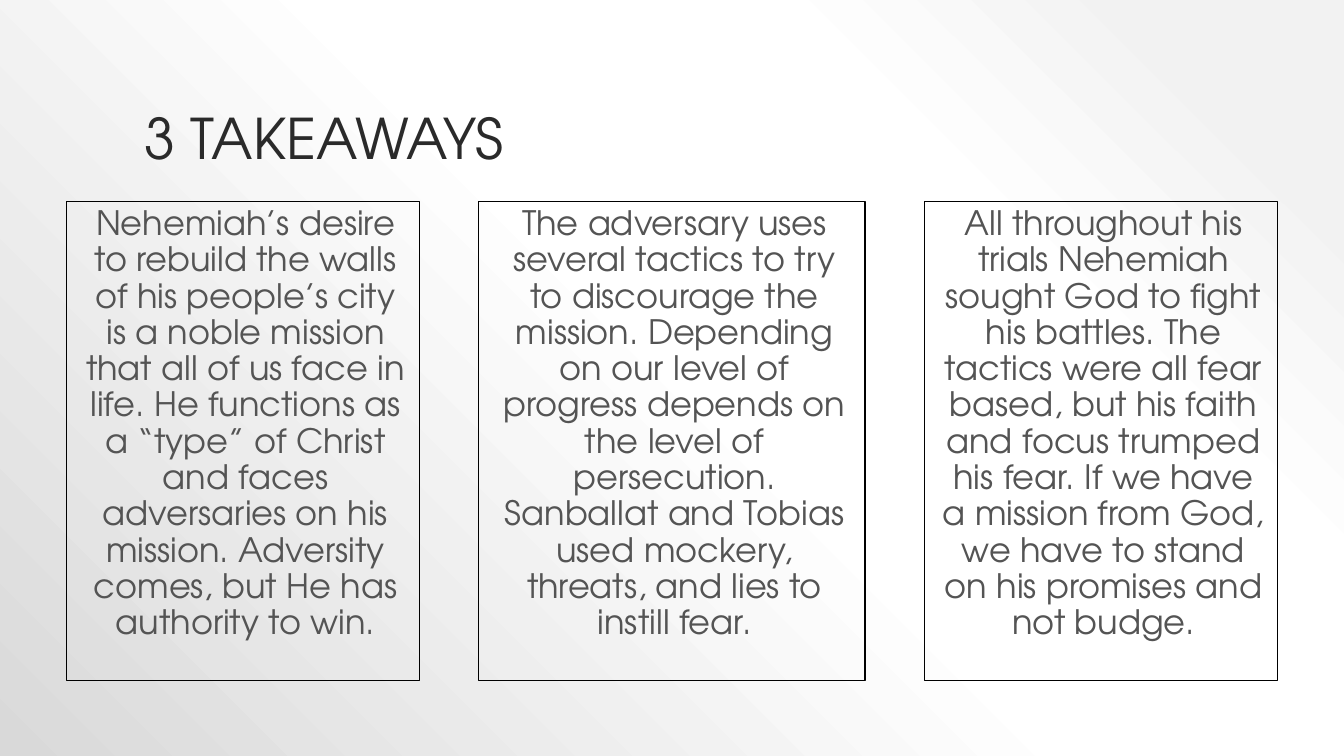
from lxml import etree
from pptx import Presentation
from pptx import util as u
from pptx.dml.color import RGBColor
from pptx.enum import shapes, text
from pptx.oxml import ns

WIDTH, HEIGHT = 13.33, 7.5
FONT = "TeX Gyre Adventor"
TITLE_COLOR = RGBColor(0x2A, 0x2A, 0x2A)
BODY_COLOR = RGBColor(0x54, 0x54, 0x54)
BORDER_COLOR = RGBColor(0x00, 0x00, 0x00)
BACKGROUND_STOPS = [
    (10, RGBColor(0xF2, 0xF2, 0xF2)),
    (28, RGBColor(0xFF, 0xFF, 0xFF)),
    (48, RGBColor(0xFF, 0xFF, 0xFF)),
    (100, RGBColor(0xD9, 0xD9, 0xD9)),
]

# Row of takeaways: outer margin, top and height; the gaps share what is left
MARGIN, ROW_TOP, ROW_HEIGHT = 0.66, 2, 4.75
TAKEAWAYS = [
    (3.5, "Nehemiah’s desire to rebuild the walls of his people’s city is a "
          "noble mission that all of us face in life. He functions as a “type” "
          "of Christ and faces adversaries on his mission. Adversity comes, "
          "but He has authority to win."),
    (3.83, "The adversary uses several tactics to try to discourage the "
           "mission. Depending on our level of progress depends on the level "
           "of persecution. Sanballat and Tobias used mockery, threats, and "
           "lies to instill fear."),
    (3.5, "All throughout his trials Nehemiah sought God to fight his battles. "
          "The tactics were all fear based, but his faith and focus trumped "
          "his fear. If we have a mission from God, we have to stand on his "
          "promises and not budge."),
]


def set_background(slide):
    """Radial gradient centred on the top right corner."""
    fill = slide.background.fill
    fill.gradient()
    gradient = slide.background._cSld.find(".//" + ns.qn("a:gradFill"))
    for child in list(gradient):
        gradient.remove(child)
    stops = etree.SubElement(gradient, ns.qn("a:gsLst"))
    for percent, color in BACKGROUND_STOPS:
        stop = etree.SubElement(stops, ns.qn("a:gs"), pos=str(percent * 1000))
        etree.SubElement(stop, ns.qn("a:srgbClr"), val=str(color))
    circle = etree.SubElement(gradient, ns.qn("a:path"), path="circle")
    etree.SubElement(circle, ns.qn("a:fillToRect"), l="100000", b="100000")


def write(shape, words, size, color, anchor, alignment):
    frame = shape.text_frame
    frame.text = words
    frame.word_wrap = True
    frame.vertical_anchor = anchor
    paragraph = frame.paragraphs[0]
    paragraph.alignment = alignment
    paragraph.line_spacing = 0.9
    font = paragraph.runs[0].font
    font.name, font.size, font.color.rgb = FONT, u.Pt(size), color
    return paragraph


def add_title(slide, words):
    box = slide.shapes.add_textbox(
        u.Inches(WIDTH * 0.1), u.Inches(HEIGHT * 0.04),
        u.Inches(WIDTH * 0.8), u.Inches(1.45))
    write(box, words, 40, TITLE_COLOR,
          text.MSO_ANCHOR.BOTTOM, text.PP_ALIGN.LEFT)


def add_takeaway(slide, left, width, words):
    shape = slide.shapes.add_shape(
        shapes.MSO_SHAPE.RECTANGLE, u.Inches(left), u.Inches(ROW_TOP),
        u.Inches(width), u.Inches(ROW_HEIGHT))
    shape.shadow.inherit = False
    shape.fill.background()
    shape.line.color.rgb = BORDER_COLOR
    shape.line.width = u.Pt(0.75)
    paragraph = write(shape, words, 24, BODY_COLOR,
                      text.MSO_ANCHOR.TOP, text.PP_ALIGN.CENTER)
    paragraph.space_before = u.Pt(18)
    properties = paragraph._p.get_or_add_pPr()
    properties.set("marL", str(u.Inches(0.05)))
    properties.set("indent", "0")


def main():
    presentation = Presentation()
    presentation.slide_width = u.Inches(WIDTH)
    presentation.slide_height = u.Inches(HEIGHT)
    slide = presentation.slides.add_slide(presentation.slide_layouts[6])

    set_background(slide)
    add_title(slide, "3 TAKEAWAYS")

    # Bordered columns with equal gaps
    used = sum(width for width, _ in TAKEAWAYS)
    gap = (WIDTH - 2 * MARGIN - used) / (len(TAKEAWAYS) - 1)
    left = MARGIN
    for width, words in TAKEAWAYS:
        add_takeaway(slide, left, width, words)
        left += width + gap

    presentation.save("out.pptx")


if __name__ == "__main__":
    main()
